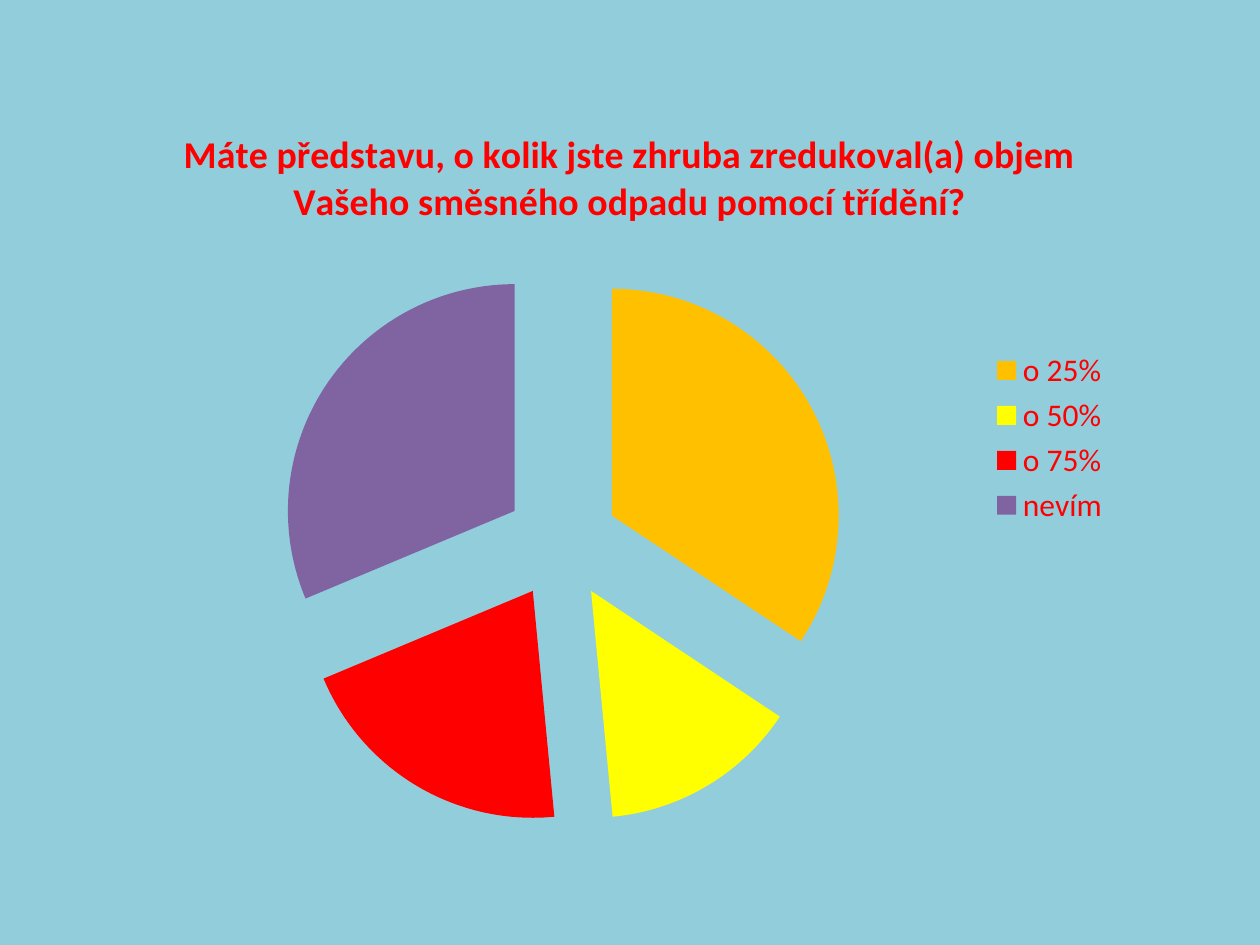
import pptx
import pptx.util
import pptx.chart.data
import pptx.dml.color
import pptx.enum.chart
import pptx.oxml

ASK = ("Máte představu, o kolik jste zhruba zredukoval(a) objem "
       "Vašeho směsného odpadu pomocí třídění?")
# Answer, count, slice colour
PARTS = [("o 25%", 34, "FFC000"), ("o 50%", 14, "FFFF00"),
         ("o 75%", 20, "FF0000"), ("nevím", 31, "8064A2")]


def paint(fill, tint):
    fill.solid()
    fill.fore_color.rgb = pptx.dml.color.RGBColor.from_string(tint)


def style(font, size=18, tint="FF0000", bold=False, face="Calibri"):
    font.name = face
    font.size = pptx.util.Pt(size)
    font.bold = bold
    paint(font.fill, tint)


def write(frame, text, **form):
    frame.text = text
    style(frame.paragraphs[0].runs[0].font, **form)


def layout(x, y, wide=None, high=None, inner=False):
    """Manual chart layout in shares of the chart's size."""
    vals = [("xMode", "edge"), ("yMode", "edge"), ("x", x), ("y", y)]
    if inner:
        vals.insert(0, ("layoutTarget", "inner"))
    if wide:
        vals += [("w", wide), ("h", high)]
    body = "".join(f'<c:{tag} val="{val}"/>' for tag, val in vals)
    return pptx.oxml.parse_xml(
        '<c:layout xmlns:c="http://schemas.openxmlformats.org/'
        f'drawingml/2006/chart"><c:manualLayout>{body}'
        '</c:manualLayout></c:layout>')


def place(node, after, *spot, **form):
    """Put a manual layout in a chart part, behind a given child or first."""
    for old in node.xpath("c:layout"):
        node.remove(old)
    kids = node.xpath(after) if after else []
    node.insert(node.index(kids[0]) + 1 if kids else 0, layout(*spot, **form))


class Deck:
    back = "92CDDC"

    def __init__(self, wide=10, high=7.5):
        self.prs = pptx.Presentation()
        self.prs.slide_width = pptx.util.Inches(wide)
        self.prs.slide_height = pptx.util.Inches(high)
        self.slide = self.prs.slides.add_slide(self.prs.slide_layouts[6])
        paint(self.slide.background.fill, self.back)

    def box(self, x, y, wide, high):
        w, h = self.prs.slide_width, self.prs.slide_height
        return [int(n) for n in (x * w, y * h, wide * w, high * h)]

    def pie(self, spot, title, parts, burst):
        data = pptx.chart.data.CategoryChartData()
        data.categories = [name for name, _, _ in parts]
        data.add_series(title, [count for _, count, _ in parts])
        chart = self.slide.shapes.add_chart(
            pptx.enum.chart.XL_CHART_TYPE.PIE, *self.box(*spot), data).chart
        style(chart.font, tint="92D050")

        # Title
        chart.has_title = True
        write(chart.chart_title.text_frame, title, size=21.6, bold=True)
        chart.chart_title.include_in_layout = False

        # Slices, pulled apart
        plot = chart.plots[0]
        plot.vary_by_categories = True
        row = plot.series[0]
        for i, (_, _, tint) in enumerate(parts):
            paint(row.points[i].format.fill, tint)
        node = row._element
        gap = pptx.oxml.parse_xml(
            '<c:explosion xmlns:c="http://schemas.openxmlformats.org/'
            f'drawingml/2006/chart" val="{burst}"/>')
        node.xpath("c:dPt")[0].addprevious(gap)
        area = chart._chartSpace.xpath("c:chart/c:plotArea")[0]
        place(area, None, 0.19, 0.21, 0.5, 0.77, inner=True)

        # Legend
        chart.has_legend = True
        key = chart.legend
        key.position = pptx.enum.chart.XL_LEGEND_POSITION.RIGHT
        key.include_in_layout = False
        style(key.font)
        place(key._element, "c:legendPos", 0.8, 0.33, 0.14, 0.25)


def main():
    deck = Deck()
    deck.pie((0.05, 0.104, 0.9, 0.79), ASK, PARTS, burst=25)
    deck.prs.save("out.pptx")


if __name__ == "__main__":
    main()
